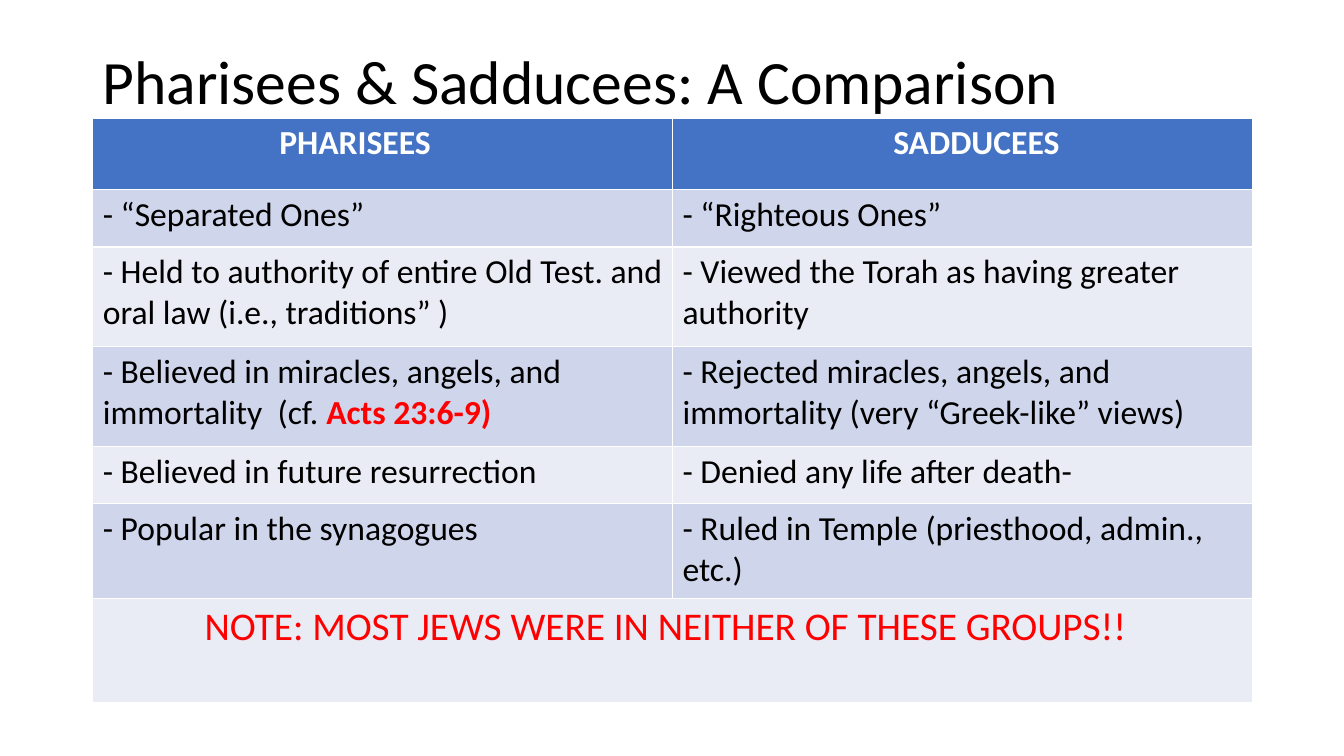
"""Build a one-slide table comparing the Pharisees and the Sadducees."""
from pptx import Presentation
from pptx.dml.color import RGBColor
from pptx.enum.text import MSO_ANCHOR as Anchor
from pptx.util import Inches, Pt


def color(hex_code):
    return RGBColor.from_string(hex_code)


def add_run(paragraph, text, size, hex_code, bold=False):
    run = paragraph.add_run()
    run.text = text
    font_format = {"name": "Calibri", "size": Pt(size), "bold": bold}
    for key, value in font_format.items():
        setattr(run.font, key, value)
    run.font.color.rgb = color(hex_code)


deck = Presentation()
deck.slide_width, deck.slide_height = Inches(13.33), Inches(7.5)
slide = deck.slides.add_slide(deck.slide_layouts[6])

title = slide.shapes.add_textbox(Inches(0.92), Inches(0.4), Inches(11.5), Inches(0.88)).text_frame
title_format = {"word_wrap": True, "vertical_anchor": Anchor.MIDDLE}
for key, value in title_format.items():
    setattr(title, key, value)
title.paragraphs[0].line_spacing = 0.9
add_run(title.paragraphs[0], "Pharisees & Sadducees: A Comparison", 44, "000000")

headings = [("PHARISEES", 1.85), ("SADDUCEES", 2.19)]
beliefs = [
    ("- “Separated Ones”", "- “Righteous Ones”"),
    ("- Held to authority of entire Old Test. and oral law (i.e., traditions” )",
     "- Viewed the Torah as having greater authority"),
    ("- Believed in miracles, angels, and immortality  (cf. ",
     "- Rejected miracles, angels, and immortality (very “Greek-like” views)"),
    ("- Believed in future resurrection", "- Denied any life after death-"),
    ("- Popular in the synagogues", "- Ruled in Temple (priesthood, admin., etc.)"),
]
row_heights = [0.71, 0.57, 0.99, 0.99, 0.57, 0.94, 1.03]
bands = ["E9EBF5", "CFD5EA"]

comparison = slide.shapes.add_table(
    len(row_heights), len(headings), Inches(0.92), Inches(1.17), Inches(11.5), Inches(5.8)
).table
for column in comparison.columns:
    column.width = Inches(5.75)
for index, height in enumerate(row_heights):
    comparison.rows[index].height = Inches(height)
    for cell in comparison.rows[index].cells:
        cell.fill.solid()
        cell.fill.fore_color.rgb = color(bands[index % 2] if index else "4472C4")

for index, (heading, indent) in enumerate(headings):
    cell = comparison.cell(0, index)
    cell.margin_left = Inches(indent)
    add_run(cell.text_frame.paragraphs[0], heading, 24, "FFFFFF", bold=True)

for row, pair in enumerate(beliefs, start=1):
    for column, belief in enumerate(pair):
        add_run(comparison.cell(row, column).text_frame.paragraphs[0], belief, 24, "000000")
add_run(comparison.cell(3, 0).text_frame.paragraphs[0], "Acts 23:6-9)", 24, "FF0000", bold=True)

note = comparison.cell(6, 0)
note.merge(comparison.cell(6, 1))
note.margin_left = Inches(1.11)
add_run(note.text_frame.paragraphs[0],
        "NOTE: MOST JEWS WERE IN NEITHER OF THESE GROUPS!!", 28, "FF0000")

deck.save("out.pptx")
